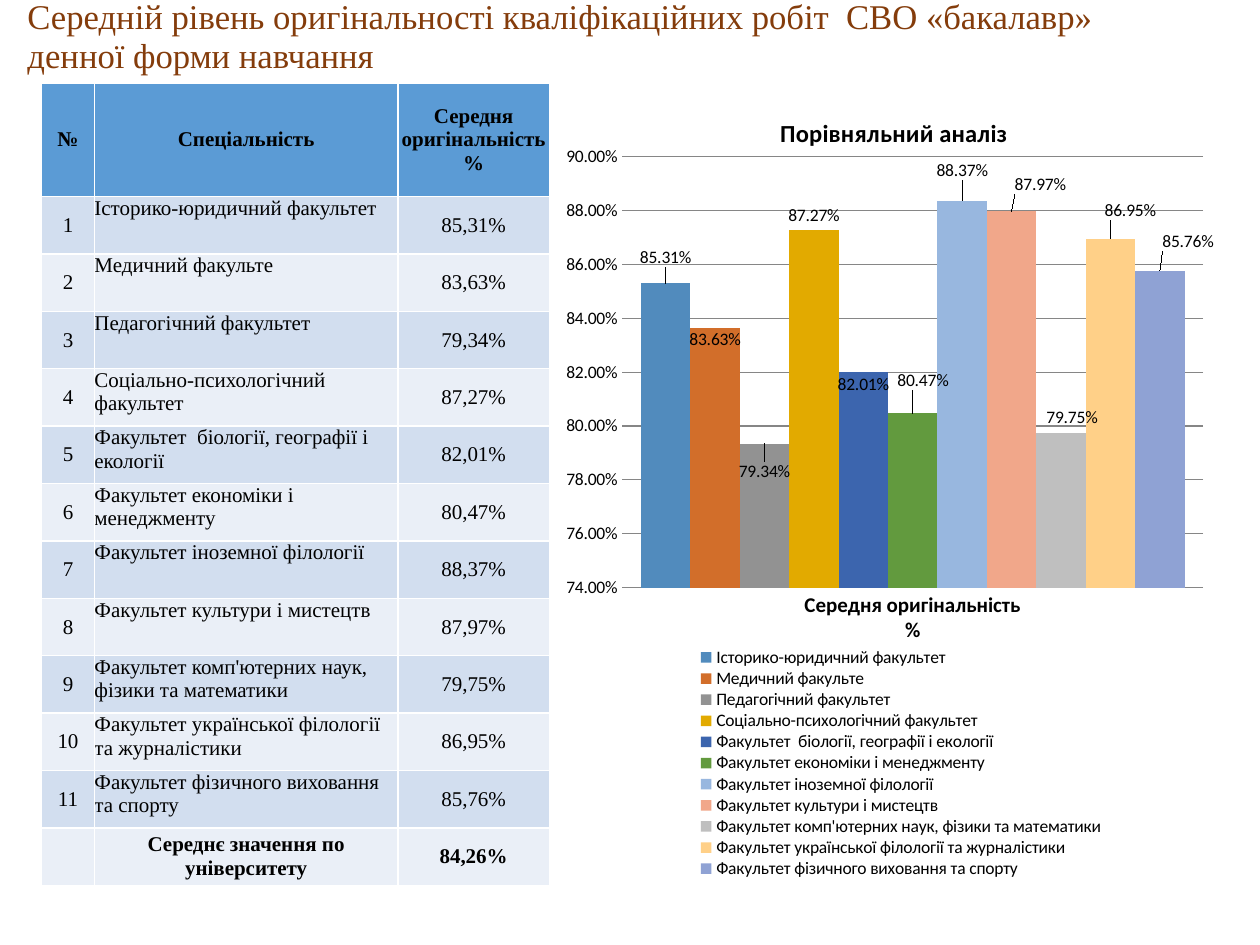
from lxml import etree
from pptx import Presentation
from pptx import util as u
from pptx.chart.data import CategoryChartData
from pptx.dml.color import RGBColor
from pptx.enum import chart as c
from pptx.enum import text as t
from pptx.oxml import parse_xml
from pptx.oxml.ns import nsdecls, qn

SERIF = "Times New Roman"
FACULTIES = [
    ("Історико-юридичний факультет", 0.8531, "518BBD", (0, -0.013)),
    ("Медичний факульте", 0.8363, "D26E2A", (0, 0.031)),
    ("Педагогічний факультет", 0.7934, "929292", (0, 0.051)),
    ("Соціально-психологічний факультет", 0.8727, "E2AA00", None),
    ("Факультет  біології, географії і екології", 0.8201, "3C65AE", (0, 0.033)),
    ("Факультет економіки і менеджменту", 0.8047, "629A3E", (0.015, -0.022)),
    ("Факультет іноземної філології", 0.8837, "98B7DF", (0, -0.018)),
    ("Факультет культури і мистецтв", 0.8797, "F1A78A", (0.042, -0.014)),
    ("Факультет комп'ютерних наук, фізики та математики", 0.7975, "BFBFBF", (0.016, 0)),
    ("Факультет української філології та журналістики", 0.8695, "FFD088", (0.029, -0.016)),
    ("Факультет фізичного виховання та спорту", 0.8576, "8FA2D4", (0.041, -0.017)),
]


def color(value):
    """Turn a hex string into a colour."""
    return RGBColor.from_string(value)


def format_font(font, size, name="Calibri", fill="000000", bold=False):
    """Set the look of a font."""
    font.size, font.name, font.bold = u.Pt(size), name, bold
    font.color.rgb = color(fill)


def write(frame, content, align=t.PP_ALIGN.LEFT, spacing=None, **style):
    """Fill a text frame with one formatted paragraph."""
    frame.word_wrap = True
    paragraph = frame.paragraphs[0]
    paragraph.text = content
    paragraph.alignment = align
    paragraph.line_spacing = spacing
    for run in paragraph.runs:
        format_font(run.font, name=SERIF, **style)


def percent(value):
    """Show a share with a decimal comma."""
    return f"{value:.2%}".replace(".", ",")


def add_heading(slide):
    """Add the slide heading."""
    box = slide.shapes.add_textbox(u.Inches(0.12), u.Inches(-0.02), u.Inches(9.76), u.Inches(0.6))
    frame = box.text_frame
    frame.margin_top = frame.margin_bottom = 0
    write(frame, "Середній рівень оригінальності кваліфікаційних робіт  СВО «бакалавр» \v"
          "денної форми навчання", spacing=0.95, size=19.8, fill="843C0B")


def fill_cell(cell, content, fill, centered=True, bold=False):
    """Fill a table cell with text and a background."""
    cell.fill.solid()
    cell.fill.fore_color.rgb = color(fill)
    cell.margin_left = cell.margin_right = cell.margin_top = cell.margin_bottom = 0
    cell.vertical_anchor = t.MSO_ANCHOR.MIDDLE if centered else t.MSO_ANCHOR.TOP
    align = t.PP_ALIGN.CENTER if centered else t.PP_ALIGN.LEFT
    write(cell.text_frame, content, align=align, size=12, bold=bold)


def add_score_table(slide):
    """Add the table of faculties and their average originality."""
    rows = [("№", "Спеціальність", "Середня оригінальність\v%")]
    rows += [(str(number), name, percent(value))
             for number, (name, value, *_) in enumerate(FACULTIES, 1)]
    rows.append(("", "Середнє значення по університету", percent(0.8426)))
    last = len(rows) - 1
    table = slide.shapes.add_table(len(rows), 3, u.Inches(0.33), u.Inches(0.66),
                                   u.Inches(4.03), u.Inches(6.37)).table
    for column, width in zip(table.columns, (0.42, 2.41, 1.2)):
        column.width = u.Inches(width)
    for index, row in enumerate(rows):
        table.rows[index].height = u.Inches(0.9 if index == 0 else (6.37 - 0.9) / last)
        edge = index in (0, last)
        fill = "5B9BD5" if index == 0 else ("EAEFF7", "D2DEEF")[index % 2]
        for position, content in enumerate(row):
            fill_cell(table.cell(index, position), content, fill,
                      centered=edge or position != 1, bold=edge)


def manual_layout(x, y, size=None, inner=False):
    """Build a layout element, as an offset or as a fixed frame."""
    values = [("layoutTarget", "inner")] if inner else []
    if size:
        values += [("xMode", "edge"), ("yMode", "edge")]
    values += [("x", x), ("y", y)]
    if size:
        values += zip("wh", size)
    layout = parse_xml(f"<c:layout {nsdecls('c')}><c:manualLayout/></c:layout>")
    for tag, value in values:
        etree.SubElement(layout[0], qn(f"c:{tag}")).set("val", str(value))
    return layout


def place_part(part, layout, position):
    """Replace the layout of a chart part."""
    for present in part.findall(qn("c:layout")):
        part.remove(present)
    part.insert(position, layout)


def style_series(series, fill, offset):
    """Colour a series and label its column."""
    series.format.fill.solid()
    series.format.fill.fore_color.rgb = color(fill)
    labels = series.data_labels
    labels.show_value = True
    labels.number_format, labels.number_format_is_linked = "0.00%", False
    labels.position = c.XL_LABEL_POSITION.OUTSIDE_END
    if offset:
        series.points[0].data_label.position = c.XL_LABEL_POSITION.OUTSIDE_END


def style_axes(chart):
    """Set the scale, lines and fonts of both axes."""
    values, categories = chart.value_axis, chart.category_axis
    values.minimum_scale, values.maximum_scale, values.major_unit = 0.74, 0.9, 0.02
    values.tick_labels.number_format = "0.00%"
    values.tick_labels.number_format_is_linked = False
    values.format.line.fill.background()
    for line in (values.major_gridlines.format.line, categories.format.line):
        line.color.rgb = color("868686")
        line.width = u.Pt(0.75)
    for axis in (values, categories):
        axis.major_tick_mark = c.XL_TICK_MARK.NONE
    format_font(categories.tick_labels.font, 12, bold=True)


def add_comparison_chart(slide):
    """Add the column chart comparing the faculties."""
    data = CategoryChartData(number_format="0.00%")
    data.categories = ["Середня оригінальність\n%"]
    for name, value, *_ in FACULTIES:
        data.add_series(name, [value])
    chart = slide.shapes.add_chart(c.XL_CHART_TYPE.COLUMN_CLUSTERED, u.Inches(4.38), u.Inches(0.7),
                                   u.Inches(5.43), u.Inches(6.64), data).chart
    format_font(chart.font, 10)
    chart.has_title = True
    chart.chart_title.text_frame.text = "Порівняльний аналіз"
    format_font(chart.chart_title.text_frame.paragraphs[0].runs[0].font, 14, bold=True)
    chart.has_legend = True
    chart.legend.position = c.XL_LEGEND_POSITION.BOTTOM
    chart.legend.include_in_layout = False
    plot = chart.plots[0]
    plot.gap_width, plot.overlap, plot.vary_by_categories = 75, 0, False
    style_axes(chart)
    for series, (_, _, fill, offset) in zip(plot.series, FACULTIES):
        style_series(series, fill, offset)
    offsets = [offset for *_, offset in FACULTIES if offset]
    for label, offset in zip(chart.element.iter(qn("c:dLbl")), offsets):
        place_part(label, manual_layout(*offset), 1)
    area = next(chart.element.iter(qn("c:plotArea")))
    place_part(area, manual_layout(0.103, 0.082, (0.849, 0.515), inner=True), 0)
    legend = next(chart.element.iter(qn("c:legend")))
    place_part(legend, manual_layout(0.21, 0.667, (0.6, 0.28)), 1)


def main():
    """Build the slide and save it."""
    presentation = Presentation()
    presentation.slide_width, presentation.slide_height = u.Inches(10), u.Inches(7.5)
    slide = presentation.slides.add_slide(presentation.slide_layouts[6])
    add_heading(slide)
    add_score_table(slide)
    add_comparison_chart(slide)
    presentation.save("out.pptx")


if __name__ == "__main__":
    main()
